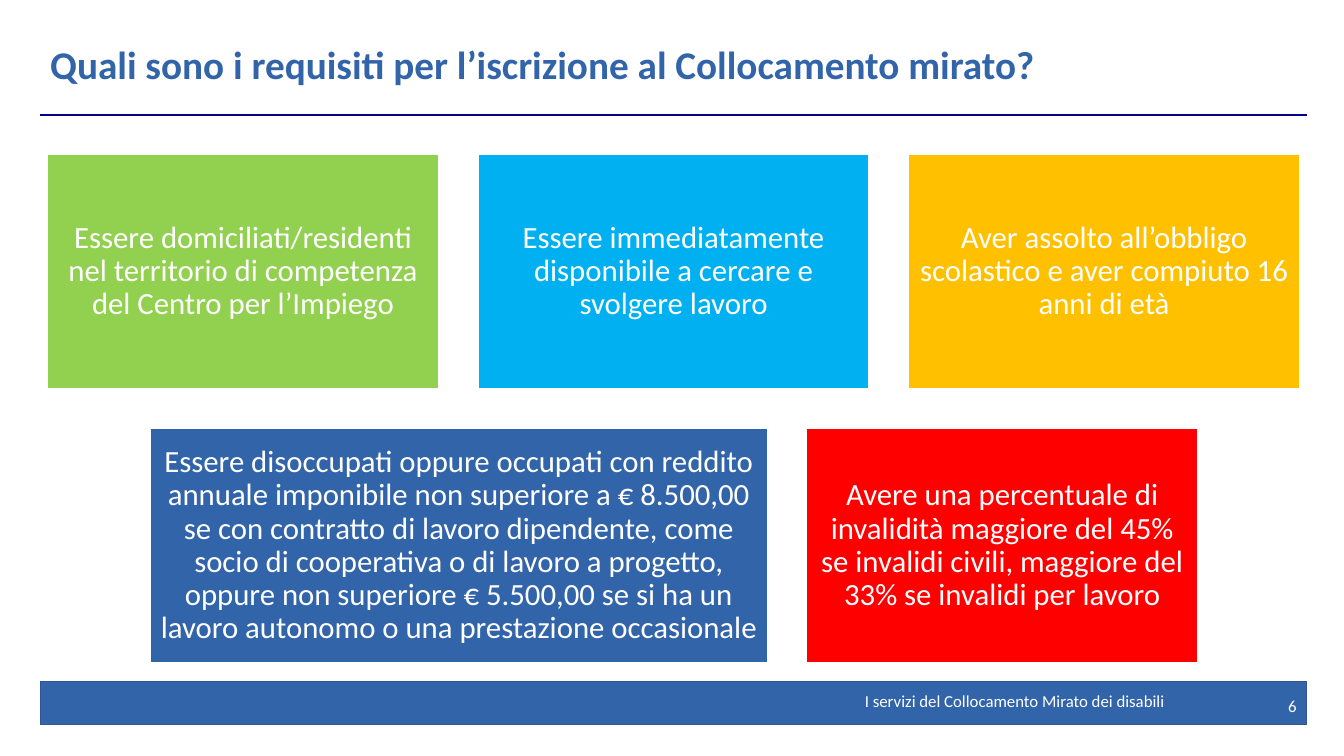
import dataclasses

import lxml.etree
import pptx
import pptx.dml.color
import pptx.enum.shapes
import pptx.enum.text
import pptx.oxml.ns
import pptx.util

RGB = pptx.dml.color.RGBColor
ALIGN = pptx.enum.text.PP_ALIGN

WHITE = RGB(0xFF, 0xFF, 0xFF)
BLUE = RGB(0x32, 0x64, 0xAA)
EDGE = RGB(0x32, 0x54, 0x91)
NAVY = RGB(0x02, 0x00, 0x8B)
GREEN = RGB(0x92, 0xD0, 0x50)
SKY = RGB(0x00, 0xB0, 0xF0)
AMBER = RGB(0xFF, 0xC0, 0x00)
RED = RGB(0xFF, 0x00, 0x00)

SCALE = 9144
FONT = "Calibri"
LEFT, WIDTH = 40, 1256
CENTER, TOP = 668, 153
HEIGHT, GAP = 233, 39


@dataclasses.dataclass(frozen=True)
class Box:
    left: int
    top: int
    width: int
    height: int


@dataclasses.dataclass(frozen=True)
class Card:
    text: str
    fill: RGB
    width: int = 388


@dataclasses.dataclass(frozen=True)
class Label:
    text: str
    box: Box
    size: int
    color: RGB
    align: ALIGN
    bold: bool = False
    pitch: float = 1.0


ROWS = (
    (
        Card("Essere domiciliati/residenti nel territorio di competenza del Centro per l’Impiego", GREEN),
        Card("Essere immediatamente disponibile a cercare e svolgere lavoro", SKY),
        Card("Aver assolto all’obbligo scolastico e aver compiuto 16 anni di età", AMBER),
    ),
    (
        Card(
            "Essere disoccupati oppure occupati con reddito annuale imponibile non superiore "
            "a € 8.500,00 se con contratto di lavoro dipendente, come socio di cooperativa o di "
            "lavoro a progetto, oppure non superiore € 5.500,00 se si ha un lavoro autonomo o "
            "una prestazione occasionale",
            BLUE,
            612,
        ),
        Card(
            "Avere una percentuale di invalidità maggiore del 45% se invalidi civili, "
            "maggiore del 33% se invalidi per lavoro",
            RED,
        ),
    ),
)

LABELS = (
    Label("Quali sono i requisiti per l’iscrizione al Collocamento mirato?",
          Box(LEFT, 34, WIDTH, 65), 28, BLUE, ALIGN.LEFT, True, 0.9),
    Label("6", Box(1176, 680, 120, 40), 12, WHITE, ALIGN.RIGHT),
    Label("I servizi del Collocamento Mirato dei disabili",
          Box(451, 681, 714, 28), 12, WHITE, ALIGN.RIGHT),
)


def px(size: int) -> pptx.util.Emu:
    return pptx.util.Emu(size * SCALE)


def place(box: Box) -> tuple:
    return tuple(px(size) for size in dataclasses.astuple(box))


def write(frame, label: Label) -> None:
    frame.word_wrap = True
    frame.vertical_anchor = pptx.enum.text.MSO_ANCHOR.MIDDLE
    line = frame.paragraphs[0]
    line.alignment = label.align
    line.line_spacing = label.pitch
    run = line.add_run()
    run.text = label.text
    run.font.name = FONT
    run.font.size = pptx.util.Pt(label.size)
    run.font.bold = label.bold
    run.font.color.rgb = label.color


def block(slide, box: Box, fill: RGB, edge: RGB):
    shape = slide.shapes.add_shape(pptx.enum.shapes.MSO_SHAPE.RECTANGLE, *place(box))
    shape.shadow.inherit = False
    shape.fill.solid()
    shape.fill.fore_color.rgb = fill
    shape.line.color.rgb = edge
    shape.line.width = pptx.util.Pt(1)
    return shape


def rule(slide, top: int) -> None:
    line = slide.shapes.add_connector(
        pptx.enum.shapes.MSO_CONNECTOR.STRAIGHT, px(LEFT), px(top), px(LEFT + WIDTH), px(top))
    line.line.color.rgb = NAVY
    line.line.width = pptx.util.Pt(1)
    lxml.etree.SubElement(line._element.spPr, pptx.oxml.ns.qn("a:effectLst"))


def tile(slide, card: Card, left: int, top: int) -> None:
    box = Box(left, top, card.width, HEIGHT)
    frame = block(slide, box, card.fill, WHITE).text_frame
    frame.margin_left = frame.margin_right = px(9)
    frame.margin_top = frame.margin_bottom = px(9)
    write(frame, Label(card.text, box, 22, WHITE, ALIGN.CENTER, pitch=0.9))


def main() -> None:
    deck = pptx.Presentation()
    deck.slide_width, deck.slide_height = px(1333), px(750)
    slide = deck.slides.add_slide(deck.slide_layouts[6])

    block(slide, Box(LEFT, 676, WIDTH, 43), BLUE, EDGE)
    rule(slide, 114)
    for label in LABELS:
        write(slide.shapes.add_textbox(*place(label.box)).text_frame, label)

    for index, row in enumerate(ROWS):
        span = sum(card.width for card in row) + GAP * (len(row) - 1)
        left = CENTER - span // 2
        for card in row:
            tile(slide, card, left, TOP + index * (HEIGHT + GAP))
            left += card.width + GAP

    deck.save("out.pptx")


if __name__ == "__main__":
    main()
